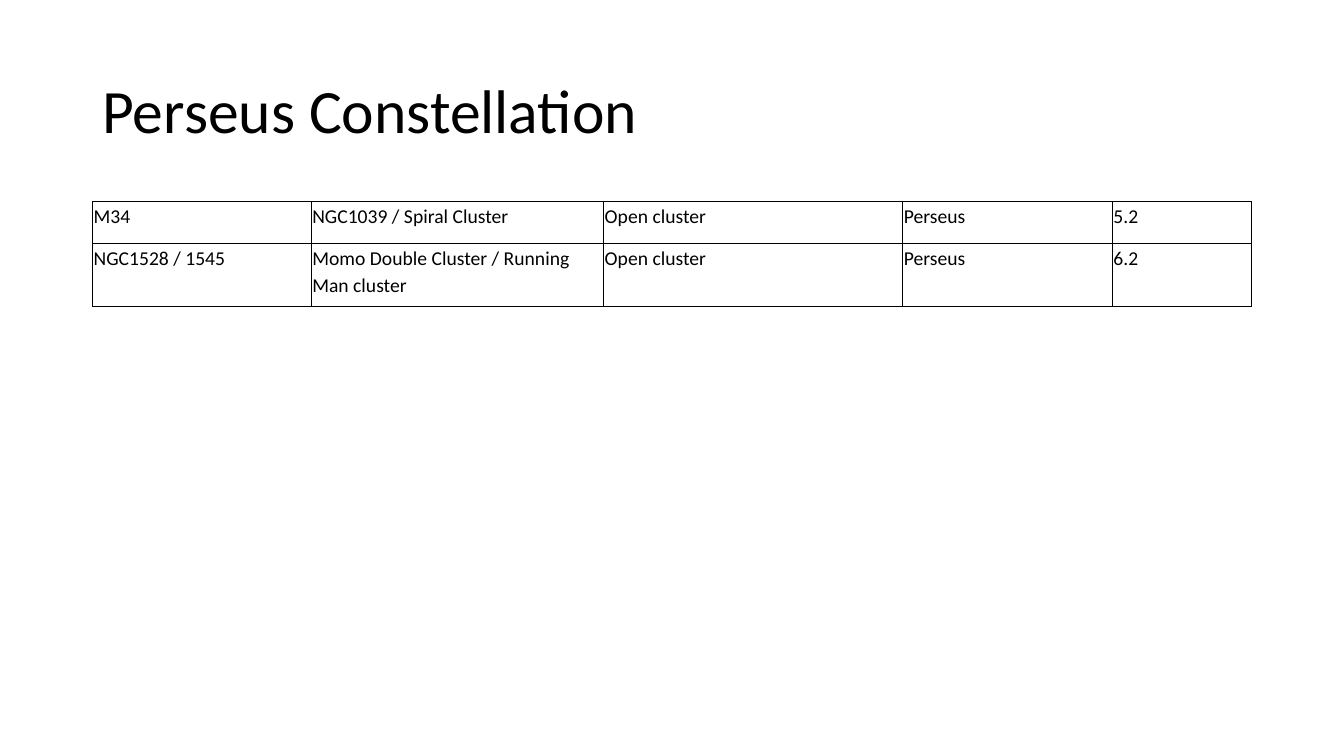
from lxml import etree
from pptx import Presentation
from pptx import util as u
from pptx.dml.color import RGBColor
from pptx.enum import text
from pptx.oxml.ns import qn

BLACK = RGBColor(0, 0, 0)
WHITE = RGBColor(255, 255, 255)
FONT = "Calibri"

COLUMN_WIDTHS = [5.51, 7.37, 7.54, 5.28, 3.51]
ROW_HEIGHTS = [1.06, 1.58]
CLUSTERS = [
    ["M34", "NGC1039 / Spiral Cluster", "Open cluster", "Perseus", "5.2"],
    ["NGC1528 / 1545", "Momo Double Cluster / Running Man cluster",
     "Open cluster", "Perseus", "6.2"],
]


def write_text(frame, words, size, spacing, color=BLACK):
    para = frame.paragraphs[0]
    para.line_spacing = spacing
    span = para.add_run()
    span.text = words
    span.font.name = FONT
    span.font.size = u.Pt(size)
    span.font.color.rgb = color


def add_borders(cell, width=0.5, color=BLACK):
    properties = cell._tc.get_or_add_tcPr()
    for side in ("lnL", "lnR", "lnT", "lnB"):
        line = etree.SubElement(properties, qn(f"a:{side}"), w=str(u.Pt(width)))
        fill = etree.SubElement(line, qn("a:solidFill"))
        etree.SubElement(fill, qn("a:srgbClr"), val=str(color))


def add_title(page, left, top, width, height):
    box = page.shapes.add_textbox(left, top, width, height)
    frame = box.text_frame
    frame.word_wrap = True
    frame.vertical_anchor = text.MSO_ANCHOR.MIDDLE
    write_text(frame, "Perseus Constellation", size=44, spacing=0.9)


def add_cluster_table(page, left, top, width, height):
    table = page.shapes.add_table(
        len(CLUSTERS), len(COLUMN_WIDTHS), left, top, width, height).table
    table.first_row = False
    table.horz_banding = False
    for column, share in zip(table.columns, COLUMN_WIDTHS):
        column.width = int(width * share / sum(COLUMN_WIDTHS))
    for row, share, entries in zip(table.rows, ROW_HEIGHTS, CLUSTERS):
        row.height = int(height * share / sum(ROW_HEIGHTS))
        for cell, words in zip(row.cells, entries):
            cell.margin_left = cell.margin_right = cell.margin_top = u.Cm(0.03)
            cell.margin_bottom = u.Cm(0.13)
            add_borders(cell)
            cell.fill.background()
            write_text(cell.text_frame, words, size=14, spacing=1.1)


def main():
    deck = Presentation()
    deck.slide_width = u.Cm(33.87)
    deck.slide_height = u.Cm(19.05)
    page = deck.slides.add_slide(deck.slide_layouts[6])
    page.background.fill.solid()
    page.background.fill.fore_color.rgb = WHITE
    left, width = u.Cm(2.33), u.Cm(29.21)
    add_title(page, left, u.Cm(1.01), width, u.Cm(3.68))
    add_cluster_table(page, left, u.Cm(5.08), width, u.Cm(2.64))
    deck.save("out.pptx")


if __name__ == "__main__":
    main()
